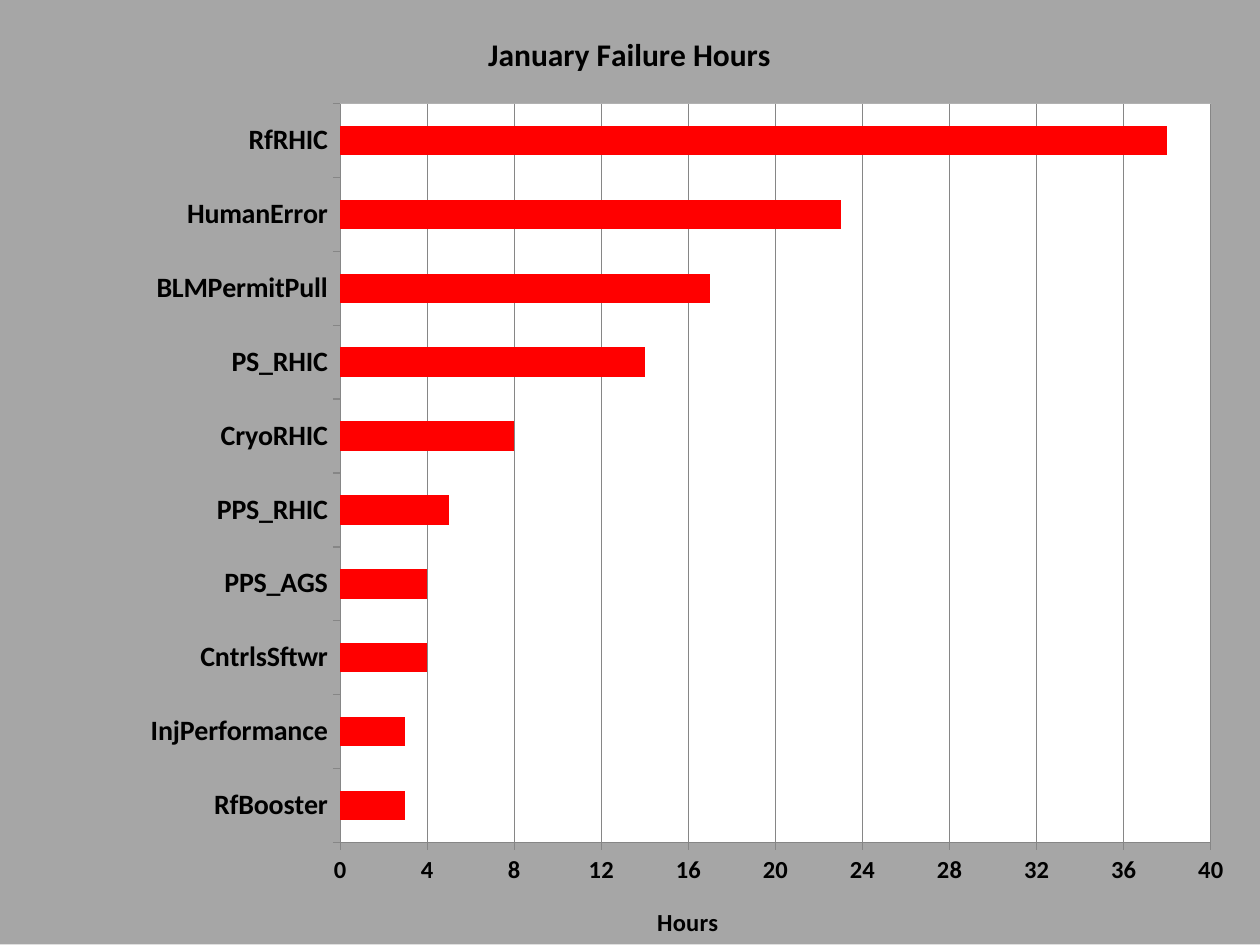
from dataclasses import dataclass

from pptx import Presentation
from pptx.chart.data import CategoryChartData
from pptx.dml.color import RGBColor
from pptx.enum.chart import XL_CHART_TYPE, XL_TICK_MARK
from pptx.oxml import parse_xml
from pptx.oxml.ns import nsdecls, qn
from pptx.util import Inches, Pt


@dataclass(frozen=True)
class Theme:
    font: str = "Calibri"
    text: str = "000000"
    surround: str = "A6A6A6"
    plot: str = "FFFFFF"
    bar: str = "FF0000"
    rule: str = "868686"
    base_size: float = 10
    title_size: float = 18
    category_size: float = 16
    hours_size: float = 14


FAILURE_HOURS = {
    "RfBooster": 3,
    "InjPerformance": 3,
    "CntrlsSftwr": 4,
    "PPS_AGS": 4,
    "PPS_RHIC": 5,
    "CryoRHIC": 8,
    "PS_RHIC": 14,
    "BLMPermitPull": 17,
    "HumanError": 23,
    "RfRHIC": 38,
}


class SlideBuilder:
    def __init__(self, slide, theme):
        self.slide = slide
        self.theme = theme

    def style_font(self, font, size, bold=True):
        formats = {"name": self.theme.font, "size": Pt(size), "bold": bold}
        for name, value in formats.items():
            setattr(font, name, value)
        font.color.rgb = RGBColor.from_string(self.theme.text)

    def style_line(self, line):
        line.color.rgb = RGBColor.from_string(self.theme.rule)
        line.width = Pt(0.75)

    def place(self, element, index, position, target=""):
        for layout in element.findall(qn("c:layout")):
            element.remove(layout)
        settings = {"layoutTarget": target} if target else {}
        settings |= {"xMode": "edge", "yMode": "edge"}
        settings |= dict(zip("xywh", position))
        body = "".join(f'<c:{tag} val="{value}"/>' for tag, value in settings.items())
        element.insert(index, parse_xml(
            f'<c:layout {nsdecls("c")}><c:manualLayout>{body}</c:manualLayout></c:layout>'))

    def solid_area(self, color):
        return parse_xml(
            f'<c:spPr {nsdecls("c", "a")}><a:solidFill><a:srgbClr val="{color}"/>'
            '</a:solidFill><a:ln><a:noFill/></a:ln></c:spPr>')

    def title(self, owner, words, size, position):
        heading = owner.chart_title if hasattr(owner, "chart_title") else owner.axis_title
        heading.text_frame.text = words
        self.style_font(heading.text_frame.paragraphs[0].runs[0].font, size)
        self.place(heading._element, 1, position)

    def axis(self, axis, size, **formats):
        formats |= {"major_tick_mark": XL_TICK_MARK.OUTSIDE,
                    "minor_tick_mark": XL_TICK_MARK.NONE}
        for name, value in formats.items():
            setattr(axis, name, value)
        self.style_font(axis.tick_labels.font, size)
        self.style_line(axis.format.line)

    def bar_chart(self, values, left, top, width, height):
        theme = self.theme
        data = CategoryChartData(number_format="General")
        data.categories = list(values)
        data.add_series("Series 1", list(values.values()))
        chart = self.slide.shapes.add_chart(
            XL_CHART_TYPE.BAR_CLUSTERED, Inches(left), Inches(top),
            Inches(width), Inches(height), data).chart
        chart.has_legend = False
        self.style_font(chart.font, theme.base_size, bold=False)

        bars = chart.plots[0]
        bars.gap_width = 150
        bars.vary_by_categories = False
        fill = bars.series[0].format.fill
        fill.solid()
        fill.fore_color.rgb = RGBColor.from_string(theme.bar)

        self.axis(chart.category_axis, theme.category_size, has_major_gridlines=False)
        hours = chart.value_axis
        self.axis(hours, theme.hours_size, minimum_scale=0, maximum_scale=40,
                  major_unit=4, has_major_gridlines=True)
        self.style_line(hours.major_gridlines.format.line)
        self.title(chart, "January Failure Hours", theme.title_size, (0.383, 0.028))
        self.title(hours, "Hours", theme.hours_size, (0.518, 0.953))

        chart_root = chart._chartSpace.find(qn("c:chart"))
        chart_root.addnext(self.solid_area(theme.surround))
        plot_area = chart_root.find(qn("c:plotArea"))
        self.place(plot_area, 0, (0.27, 0.11, 0.691, 0.782), "inner")
        plot_area.append(self.solid_area(theme.plot))


def main():
    deck = Presentation()
    deck.slide_width, deck.slide_height = Inches(10), Inches(7.5)
    slide = deck.slides.add_slide(deck.slide_layouts[6])
    SlideBuilder(slide, Theme()).bar_chart(FAILURE_HOURS, 0, 0, 10, 7.5)
    deck.save("out.pptx")


if __name__ == "__main__":
    main()
